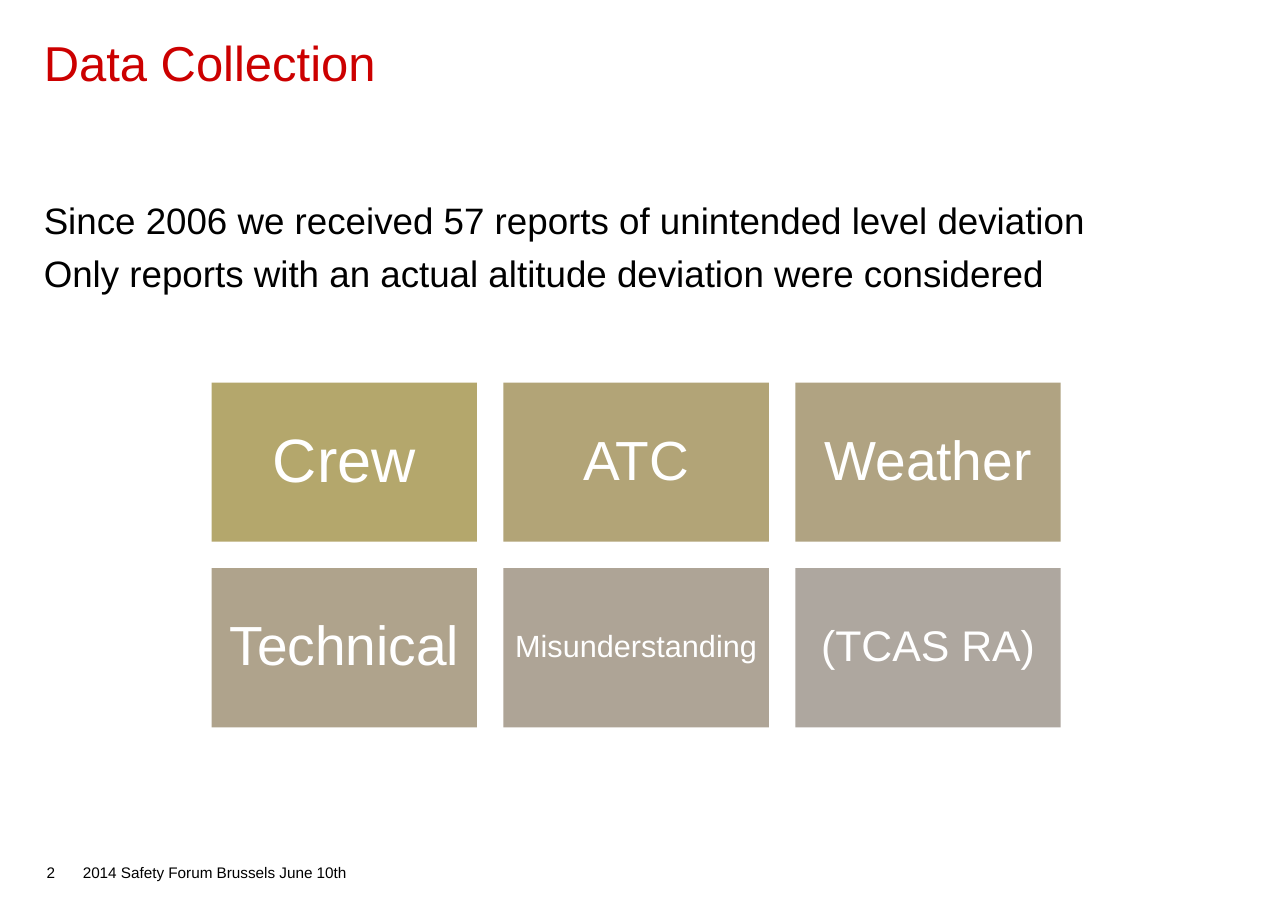
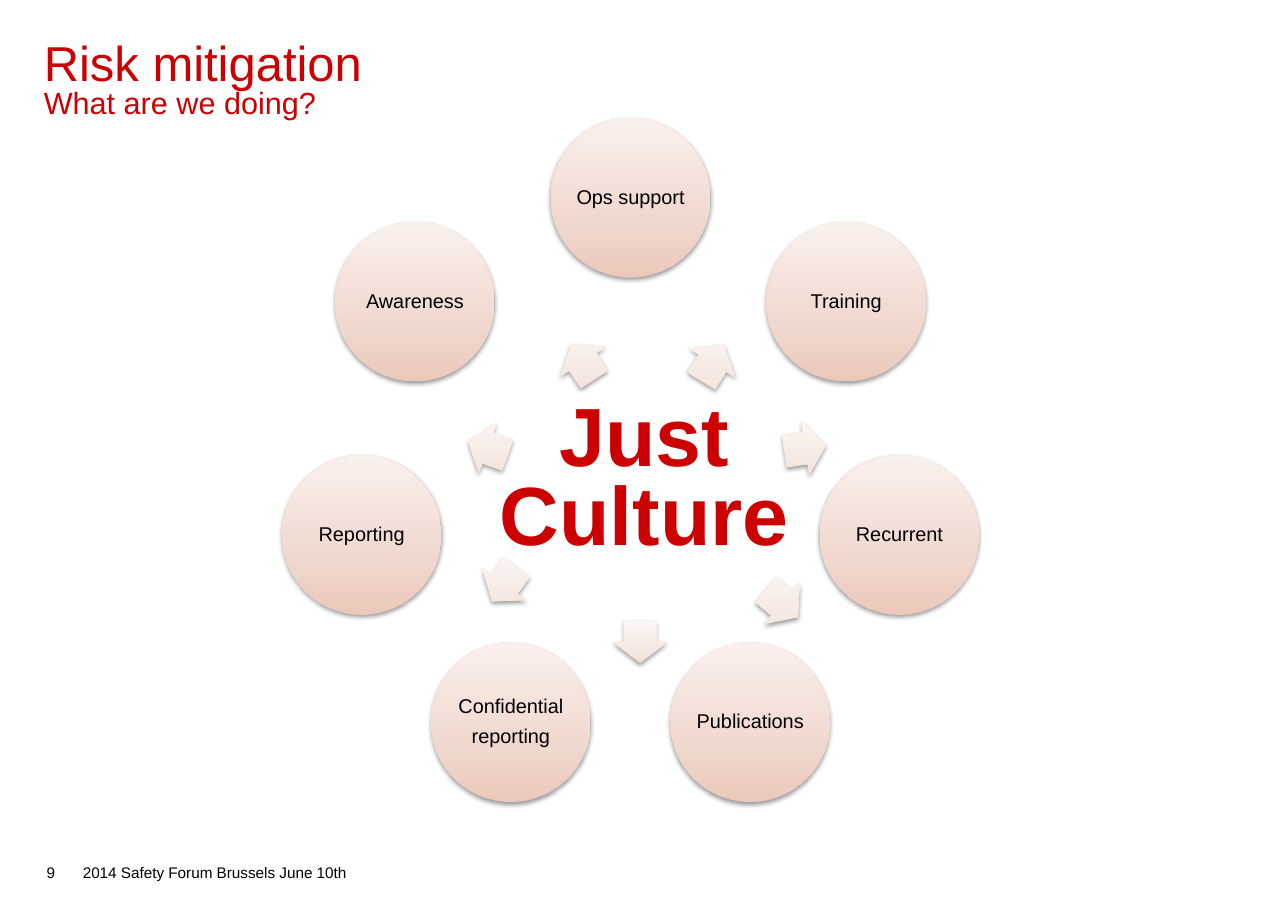
from math import cos, pi, sin

from pptx import Presentation
from pptx.dml.color import RGBColor
from pptx.enum.shapes import MSO_SHAPE as Shape
from pptx.enum.text import MSO_ANCHOR as Anchor, PP_ALIGN as Align
from pptx.oxml import parse_xml
from pptx.oxml.ns import nsdecls, qn
from pptx.util import Cm, Pt

RED, BLACK, WHITE = "CC0000", "000000", "FFFFFF"
CIRCLE_STOPS = [(0, "EBC8BA"), (35, "F0D8CE"), (100, "FAF0EC")]
ARROW_STOPS = [(0, "F3E0D8"), (35, "F6E9E3"), (100, "FCF6F4")]


def rgb(value):
    return RGBColor.from_string(value)


def set_all(target, values):
    for name, value in values.items():
        setattr(target, name, value)


class Deck:
    font = "Arial"
    footer = "2014 Safety Forum Brussels June 10th"

    def __init__(self):
        self.prs = Presentation()
        set_all(self.prs, {"slide_width": Cm(29.7), "slide_height": Cm(21)})

    def slide(self, number, title, subtitle=None):
        """Start a slide with its title and footer."""
        self.s = self.prs.slides.add_slide(self.prs.slide_layouts[6])
        p = self.text((0.81, 0.81, 28.04, 2.67), [title], 32, RED,
                      insets=(0.2, 0.2, 0.2, 0), line_spacing=0.8)
        if subtitle:
            p.add_line_break()
            self.run(p, subtitle, 20, RED)
        self.text((1.91, 19.91, 12.65, 1), [self.footer], 10)
        self.text((0.66, 19.91, 0.61, 1), [str(number)], 10,
                  alignment=Align.RIGHT)

    def run(self, p, text, size, color, bold=False):
        r = p.add_run()
        r.text = text
        set_all(r.font, {"name": self.font, "size": Pt(size), "bold": bold})
        r.font.color.rgb = rgb(color)

    def label(self, sp, lines, size, color=BLACK, insets=(0, 0, 0, 0),
              anchor=Anchor.TOP, bold=False, gap=0, **paragraph):
        """Fill a shape with one paragraph per line; return the last one."""
        tf = sp.text_frame
        sides = ("margin_left", "margin_top", "margin_right", "margin_bottom")
        set_all(tf, dict(zip(sides, map(Cm, insets))))
        set_all(tf, {"word_wrap": True, "vertical_anchor": anchor})
        for i, line in enumerate(lines):
            p = tf.add_paragraph() if i else tf.paragraphs[0]
            set_all(p, {"alignment": Align.LEFT, **paragraph})
            if i:
                p.space_before = Pt(gap)
            self.run(p, line, size, color, bold)
        return p

    def text(self, box, lines, size, color=BLACK, **style):
        sp = self.s.shapes.add_textbox(*map(Cm, box))
        return self.label(sp, lines, size, color, **style)

    def shape(self, kind, box):
        sp = self.s.shapes.add_shape(kind, *map(Cm, box))
        sp.shadow.inherit = False
        sp.line.fill.background()
        return sp

    def card(self, box, name, size, fill):
        sp = self.shape(Shape.RECTANGLE, box)
        sp.fill.solid()
        sp.fill.fore_color.rgb = rgb(fill)
        self.label(sp, [name], size, WHITE, insets=(0.2,) * 4,
                   anchor=Anchor.MIDDLE, alignment=Align.CENTER,
                   line_spacing=0.9)

    def shaded(self, kind, center, size, stops):
        """Add a centred shape with an upward gradient and a soft shadow."""
        (x, y), (w, h) = center, size
        sp = self.shape(kind, (x - w / 2, y - h / 2, w, h))
        sp.fill.background()
        props = sp.element.spPr
        gs = "".join(f'<a:gs pos="{pos * 1000}"><a:srgbClr val="{color}"/></a:gs>'
                     for pos, color in stops)
        props.replace(props.find(qn("a:noFill")), parse_xml(
            f'<a:gradFill {nsdecls("a")} rotWithShape="0"><a:gsLst>{gs}</a:gsLst>'
            '<a:lin ang="16200000" scaled="0"/></a:gradFill>'))
        props.find(qn("a:effectLst")).append(parse_xml(
            f'<a:outerShdw {nsdecls("a")} blurRad="{Pt(3.1)}" dist="{Pt(1.6)}" '
            'dir="5400000" rotWithShape="0"><a:srgbClr val="000000">'
            '<a:alpha val="38000"/></a:srgbClr></a:outerShdw>'))
        return sp

    def circle(self, center, lines):
        sp = self.shaded(Shape.OVAL, center, (3.68, 3.68), CIRCLE_STOPS)
        self.label(sp, lines, 13, insets=(0.04,) * 4, anchor=Anchor.MIDDLE,
                   gap=5.5, alignment=Align.CENTER, line_spacing=0.9)

    def arrow(self, center, angle):
        sp = self.shaded(Shape.RIGHT_ARROW, center, (0.97, 1.25), ARROW_STOPS)
        sp.adjustments[0], sp.adjustments[1] = 0.6, 0.5
        sp.rotation = angle


def data_collection(deck):
    deck.slide(2, "Data Collection")
    deck.text((0.81, 4.55, 28.04, 3.5),
              ["Since 2006 we received 57 reports of unintended level deviation",
               "Only reports with an actual altitude deviation were considered"],
              24, insets=(0.2, 0, 0.2, 0), gap=6)

    # Causes in a grid of three columns
    causes = [("Crew", 40, "B4A76C"), ("ATC", 36, "B2A477"),
              ("Weather", 36, "B0A382"), ("Technical", 36, "AFA38C"),
              ("Misunderstanding", 20, "AEA496"), ("(TCAS RA)", 28, "AEA79F")]
    w, h, gap = 6.12, 3.67, 0.61
    for i, cause in enumerate(causes):
        row, col = divmod(i, 3)
        deck.card((4.88 + col * (w + gap), 8.82 + row * (h + gap), w, h), *cause)


def risk_mitigation(deck):
    deck.slide(9, "Risk mitigation", "What are we doing?")

    # Measures spread evenly around a ring, clockwise from the top
    measures = [["Ops support"], ["Training"], ["Recurrent"], ["Publications"],
                ["Confidential", "reporting"], ["Reporting"], ["Awareness"]]
    cx, cy, radius = 14.54, 10.92, 6.36
    for i, lines in enumerate(measures):
        turn = 2 * pi * i / len(measures)
        deck.circle((cx + radius * sin(turn), cy - radius * cos(turn)), lines)

    # Arrows pointing outwards: centre x, centre y, rotation
    for x, y, angle in [(16.43, 8.37, 302), (18.57, 10.33, 351.7),
                        (18.03, 13.91, 40.7), (14.76, 14.8, 90),
                        (11.63, 13.47, 125.6), (11.25, 10.33, 199.7),
                        (13.44, 8.34, 236.8)]:
        deck.arrow((x, y), angle)

    # Central message
    deck.text((11.25, 9.09, 7.01, 4.8), ["Just", "Culture"], 54, RED, bold=True,
              insets=(0.2, 0.2, 0, 0), alignment=Align.CENTER, line_spacing=0.8)


def main():
    deck = Deck()
    data_collection(deck)
    risk_mitigation(deck)
    deck.prs.save("out.pptx")


if __name__ == "__main__":
    main()
